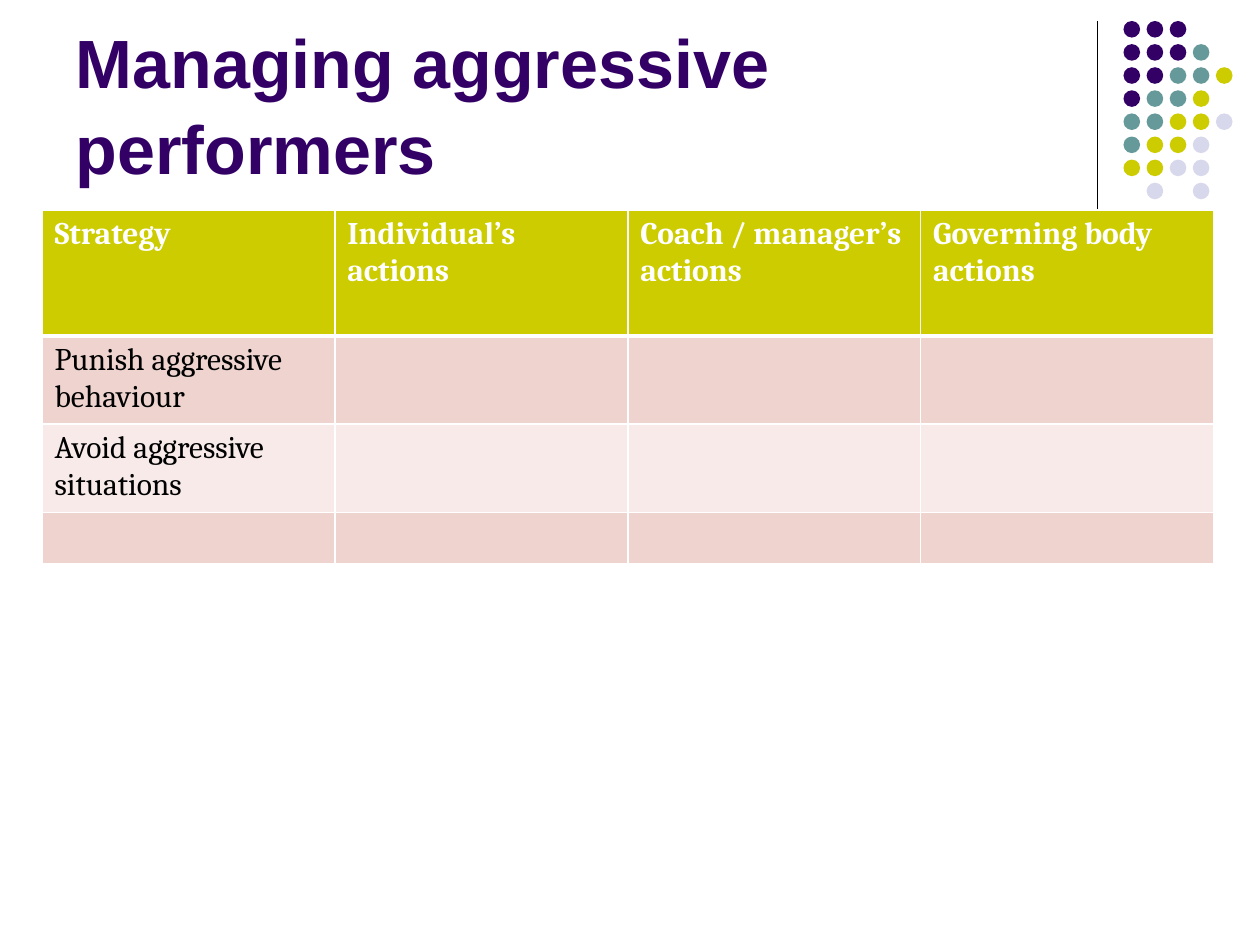
from dataclasses import dataclass

from lxml import etree
from pptx import Presentation
from pptx.dml.color import RGBColor
from pptx.enum.shapes import MSO_CONNECTOR, MSO_SHAPE
from pptx.enum.text import MSO_ANCHOR, PP_ALIGN
from pptx.oxml.ns import qn
from pptx.util import Pt

STRAIGHT = MSO_CONNECTOR.STRAIGHT
OVAL = MSO_SHAPE.OVAL
BOTTOM = MSO_ANCHOR.BOTTOM
LEFT = PP_ALIGN.LEFT
TITLE_ONLY = 5


@dataclass(frozen=True)
class Theme:
    purple: str = "330066"
    teal: str = "669999"
    lime: str = "CCCC00"
    lilac: str = "D8D8EC"
    rose: str = "EED3CF"
    blush: str = "F7EAE9"
    black: str = "000000"
    white: str = "FFFFFF"
    title_font: str = "Arial"
    table_font: str = "Cambria"
    title_size: float = 39
    table_size: float = 18


THEME = Theme()

# Each letter is a dot colour, a space is a gap
DOT_ROWS = ["PPP", "PPPT", "PPTTL", "PTTL", "TTLLI", "TLLI", "LLII", " I I"]
DOT_COLOURS = {"P": THEME.purple, "T": THEME.teal,
               "L": THEME.lime, "I": THEME.lilac}

TABLE_ROWS = [
    ["Strategy", "Individual’s actions", "Coach / manager’s actions",
     "Governing body actions"],
    ["Punish aggressive behaviour", "", "", ""],
    ["Avoid aggressive situations", "", "", ""],
    ["", "", "", ""],
]
ROW_HEIGHTS = [72, 50.4, 50.4, 29.5]


def rgb(colour):
    return RGBColor.from_string(colour)


def write_text(frame, text, *, font, size, colour, bold=False, spacing=1.0):
    """Put one formatted paragraph in a text frame."""
    para = frame.paragraphs[0]
    para.alignment = LEFT
    para.line_spacing = spacing
    span = para.add_run()
    span.text = text
    span.font.name = font
    span.font.size = Pt(size)
    span.font.bold = bold
    span.font.color.rgb = rgb(colour)


def set_border(cell, side, colour, width):
    """Add one cell border; call before the cell's fill is set."""
    properties = cell._tc.get_or_add_tcPr()
    line = etree.SubElement(properties, qn(f"a:ln{side}"), w=str(Pt(width)))
    fill = etree.SubElement(line, qn("a:solidFill"))
    etree.SubElement(fill, qn("a:srgbClr"), val=colour)


class SlideBuilder:
    def __init__(self, page, theme):
        self.page = page
        self.theme = theme

    def title(self, text, left, top, width, height):
        box = self.page.shapes.title
        box.left, box.top = Pt(left), Pt(top)
        box.width, box.height = Pt(width), Pt(height)
        box.text_frame.vertical_anchor = BOTTOM
        box.text_frame.word_wrap = True
        write_text(box.text_frame, text, font=self.theme.title_font,
                   size=self.theme.title_size, colour=self.theme.purple,
                   bold=True, spacing=1.05)

    def line(self, x1, y1, x2, y2, colour, width):
        rule = self.page.shapes.add_connector(
            STRAIGHT, Pt(x1), Pt(y1), Pt(x2), Pt(y2))
        rule.line.color.rgb = rgb(colour)
        rule.line.width = Pt(width)
        etree.SubElement(rule._element.spPr, qn("a:effectLst"))

    def dots(self, rows, colours, left, top, pitch, size):
        group = self.page.shapes.add_group_shape()
        for row, letters in enumerate(rows):
            for column, letter in enumerate(letters):
                if letter == " ":
                    continue
                dot = group.shapes.add_shape(
                    OVAL, Pt(left + column * pitch), Pt(top + row * pitch),
                    Pt(size), Pt(size))
                dot.shadow.inherit = False
                dot.fill.solid()
                dot.fill.fore_color.rgb = rgb(colours[letter])
                dot.line.fill.background()

    def table(self, rows, heights, left, top, width):
        columns = len(rows[0])
        table = self.page.shapes.add_table(
            len(rows), columns, Pt(left), Pt(top), Pt(width),
            Pt(sum(heights))).table
        for column in table.columns:
            column.width = Pt(width / columns)
        for row, texts in enumerate(rows):
            table.rows[row].height = Pt(heights[row])
            for column, text in enumerate(texts):
                self.cell(table.cell(row, column), text, row)

    def cell(self, cell, text, row):
        theme = self.theme
        header = row == 0
        # The rule under the header is thicker than the others
        widths = {"L": 1, "R": 1, "T": 3 if row == 1 else 1,
                  "B": 3 if header else 1}
        for side, width in widths.items():
            set_border(cell, side, theme.white, width)
        band = theme.rose if row % 2 else theme.blush
        cell.fill.solid()
        cell.fill.fore_color.rgb = rgb(theme.lime if header else band)
        if text:
            write_text(cell.text_frame, text, font=theme.table_font,
                       size=theme.table_size, bold=header,
                       colour=theme.white if header else theme.black)


def main():
    deck = Presentation()
    deck.slide_width, deck.slide_height = Pt(720), Pt(540)
    page = deck.slides.add_slide(deck.slide_layouts[TITLE_ONLY])
    builder = SlideBuilder(page, THEME)

    # Corner decoration
    builder.line(627, 12, 627, 132, THEME.black, 0.75)
    builder.dots(DOT_ROWS, DOT_COLOURS, left=642, top=12, pitch=13.2, size=9.5)

    # Heading
    builder.title("Managing aggressive performers", 36, 9.4, 594, 102)

    # Strategy table
    builder.table(TABLE_ROWS, ROW_HEIGHTS, left=24, top=120, width=669.5)

    deck.save("out.pptx")


if __name__ == "__main__":
    main()
